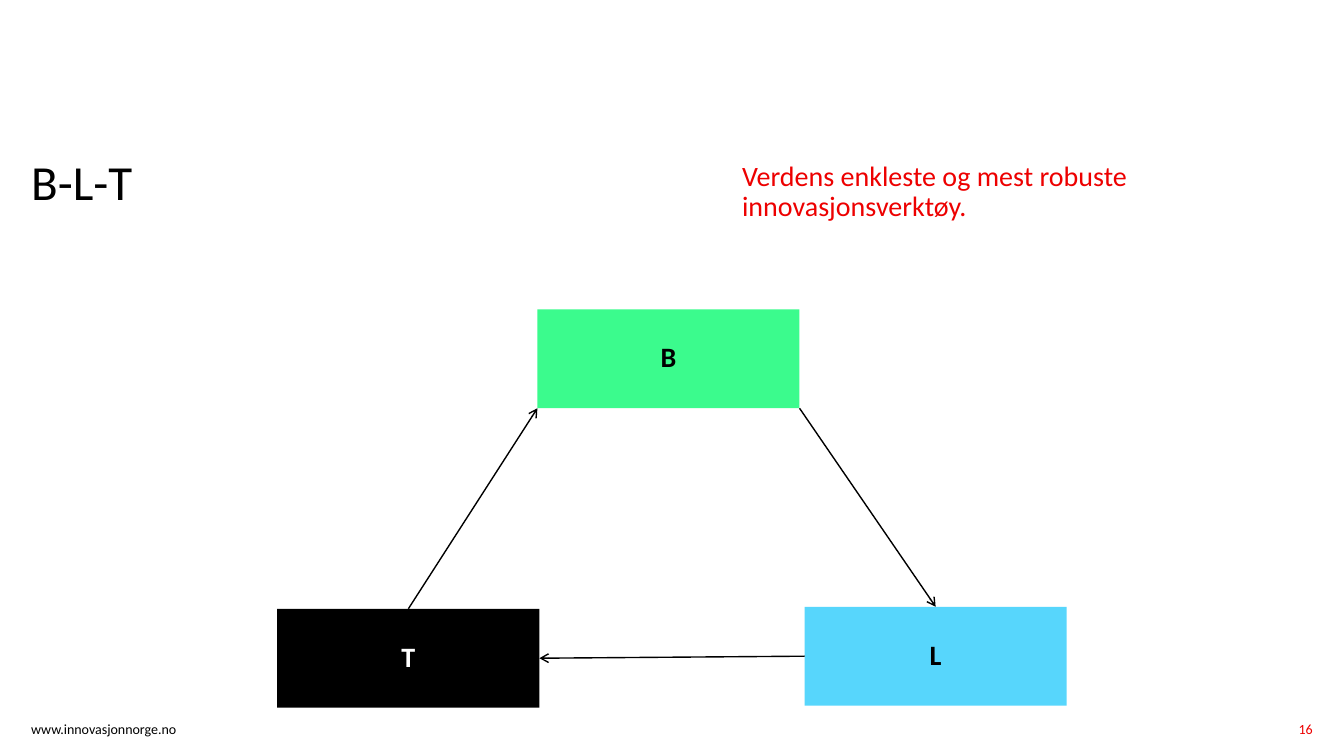
from lxml.etree import SubElement
from pptx import Presentation
from pptx.dml.color import RGBColor
from pptx.enum.shapes import MSO_CONNECTOR, MSO_SHAPE
from pptx.enum.text import MSO_ANCHOR, MSO_AUTO_SIZE, PP_ALIGN
from pptx.oxml.ns import qn
from pptx.util import Inches, Pt

COLORS = {"black": "000000", "white": "FFFFFF", "red": "ED0000",
          "green": "3BFB8D", "blue": "57D6FC"}
TOP, LEFT, RIGHT = 0, 1, 3
BOX_WIDTH, BOX_HEIGHT = 2.6, 0.98


class TriangleSlide:
    font = "Calibri"

    def __init__(self, slide):
        self.slide = slide

    def color(self, name):
        return RGBColor.from_string(COLORS[name])

    def set_text(self, shape, text, size, color, align=PP_ALIGN.LEFT,
                 anchor=MSO_ANCHOR.TOP, bold=False, spacing=0.9):
        frame = shape.text_frame
        frame.word_wrap = True
        frame.auto_size = MSO_AUTO_SIZE.NONE
        frame.vertical_anchor = anchor
        frame.margin_left = frame.margin_right = 0
        frame.margin_top = frame.margin_bottom = 0
        paragraph = frame.paragraphs[0]
        paragraph.alignment = align
        paragraph.line_spacing = spacing
        paragraph.space_before = Pt(0)
        run = paragraph.add_run()
        run.text = text
        run.font.name = self.font
        run.font.size = Pt(size)
        run.font.bold = bold
        run.font.color.rgb = self.color(color)

    def heading(self, placeholder, left, top, text, size, color):
        placeholder.left, placeholder.top = Inches(left), Inches(top)
        placeholder.width, placeholder.height = Inches(5.66), Inches(1.41)
        self.set_text(placeholder, text, size, color)

    def footer(self, left, width, text, color, align=PP_ALIGN.LEFT):
        box = self.slide.shapes.add_textbox(
            Inches(left), Inches(7.15), Inches(width), Inches(0.24))
        self.set_text(box, text, 10, color, align, spacing=1.0)

    def box(self, left, top, letter, fill, color="black"):
        box = self.slide.shapes.add_shape(
            MSO_SHAPE.RECTANGLE, Inches(left), Inches(top),
            Inches(BOX_WIDTH), Inches(BOX_HEIGHT))
        box.shadow.inherit = False
        box.fill.solid()
        box.fill.fore_color.rgb = self.color(fill)
        box.line.fill.background()
        self.set_text(box, letter, 20, color, PP_ALIGN.CENTER,
                      MSO_ANCHOR.MIDDLE, bold=True)
        return box

    def arrow(self, start=(0, 0), end=(0, 0), begin_at=None, end_at=None):
        """Draw an arrow; begin_at and end_at are (box, side) joints that override the points."""
        arrow = self.slide.shapes.add_connector(MSO_CONNECTOR.STRAIGHT, *start, *end)
        if begin_at:
            arrow.begin_connect(*begin_at)
        if end_at:
            arrow.end_connect(*end_at)
        arrow.line.color.rgb = self.color("black")
        arrow.line.width = Pt(1)
        properties = arrow._element.spPr
        SubElement(properties.find(qn("a:ln")), qn("a:tailEnd"), type="arrow")
        SubElement(properties, qn("a:effectLst"))


def main():
    deck = Presentation()
    deck.slide_width, deck.slide_height = Inches(13.33), Inches(7.5)
    slide = deck.slides.add_slide(deck.slide_layouts[0])
    page = TriangleSlide(slide)

    page.heading(slide.shapes.title, 0.31, 1.57, "B-L-T", 35, "black")
    page.heading(slide.placeholders[1], 7.36, 1.61,
                 "Verdens enkleste og mest robuste innovasjonsverktøy.", 20, "red")
    page.footer(0.31, 2.85, "www.innovasjonnorge.no", "black")
    page.footer(11.94, 1.08, "16", "red", PP_ALIGN.RIGHT)

    b = page.box(5.33, 3.07, "B", "green")
    l = page.box(7.98, 6.02, "L", "blue")
    t = page.box(2.75, 6.04, "T", "black", "white")

    b_bottom = b.top + b.height
    page.arrow(start=(b.left + b.width, b_bottom), end_at=(l, TOP))
    page.arrow(begin_at=(l, LEFT), end_at=(t, RIGHT))
    page.arrow(end=(b.left, b_bottom), begin_at=(t, TOP))

    deck.save("out.pptx")


if __name__ == "__main__":
    main()
